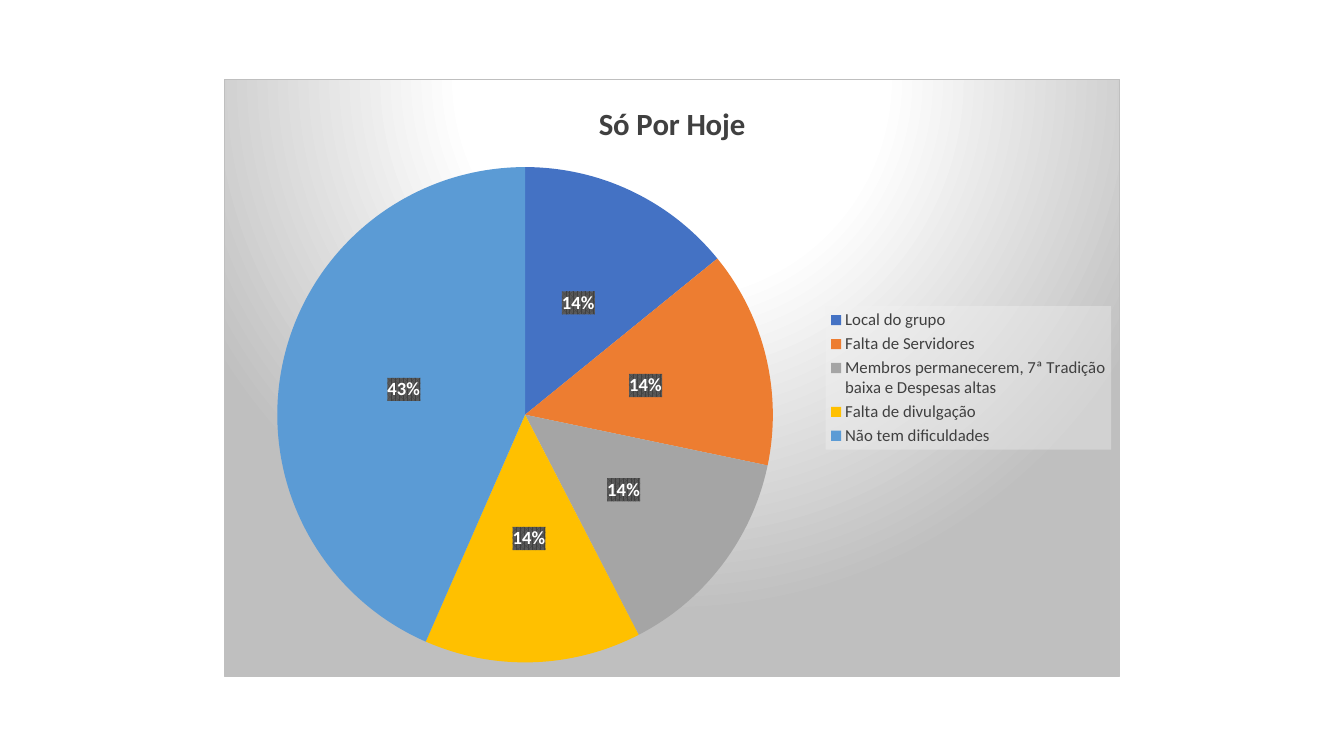
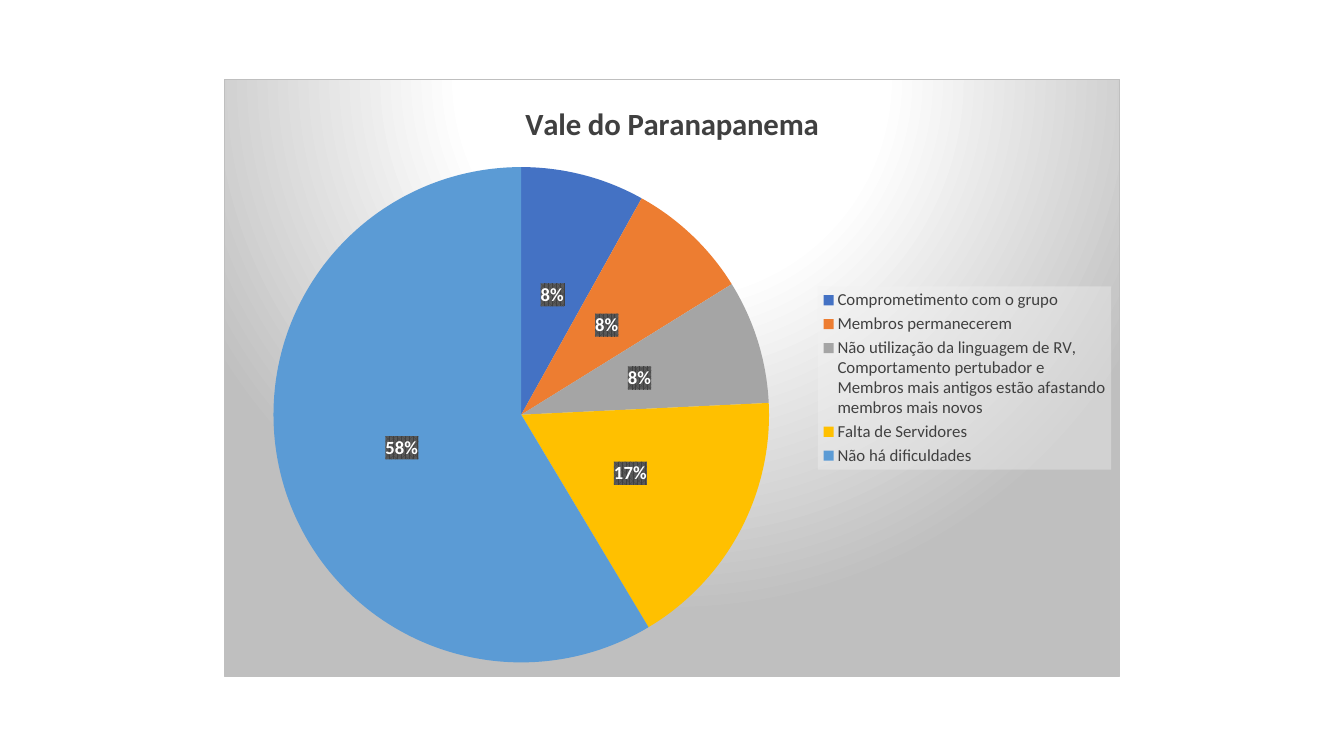
"""Build two slides, each with a pie chart of the difficulties one group reported."""
from dataclasses import dataclass

from pptx import Presentation
from pptx.chart.chart import Chart
from pptx.chart.data import CategoryChartData
from pptx.dml.color import RGBColor
from pptx.enum.chart import XL_CHART_TYPE, XL_LABEL_POSITION, XL_LEGEND_POSITION
from pptx.oxml import parse_xml
from pptx.oxml.ns import nsdecls
from pptx.presentation import Presentation as Deck
from pptx.text.text import Font
from pptx.util import Cm, Pt

PIE = XL_CHART_TYPE.PIE
LEGEND_RIGHT = XL_LEGEND_POSITION.RIGHT
LABEL_CENTER = XL_LABEL_POSITION.CENTER

FONT_NAME = "Calibri"
BLACK = RGBColor(0x00, 0x00, 0x00)
WHITE = RGBColor(0xFF, 0xFF, 0xFF)
DARK_GRAY = RGBColor(0x40, 0x40, 0x40)
LABEL_GRAY = RGBColor(0x59, 0x59, 0x59)
BORDER_GRAY = RGBColor(0xBF, 0xBF, 0xBF)
LEGEND_GRAY = RGBColor(0xF2, 0xF2, 0xF2)
SLICE_COLORS = (
    RGBColor(0x44, 0x72, 0xC4),
    RGBColor(0xED, 0x7D, 0x31),
    RGBColor(0xA5, 0xA5, 0xA5),
    RGBColor(0xFF, 0xC0, 0x00),
    RGBColor(0x5B, 0x9B, 0xD5),
)

SLIDE_WIDTH, SLIDE_HEIGHT = Cm(33.87), Cm(19.05)
CHART_WIDTH, CHART_HEIGHT = Cm(22.58), Cm(15.06)
BLANK_LAYOUT = 6

BACKGROUND = f"""
<a:gradFill><a:gsLst>
<a:gs pos="0"><a:srgbClr val="{WHITE}"/></a:gs>
<a:gs pos="39000"><a:srgbClr val="{WHITE}"/></a:gs>
<a:gs pos="100000"><a:srgbClr val="{BORDER_GRAY}"/></a:gs>
</a:gsLst><a:path path="circle">
<a:fillToRect l="50000" t="-80000" r="50000" b="180000"/></a:path></a:gradFill>
<a:ln w="{Pt(0.75)}"><a:solidFill><a:srgbClr val="{BORDER_GRAY}"/></a:solidFill></a:ln>"""
LEGEND_PANEL = f"""
<a:solidFill><a:srgbClr val="{LEGEND_GRAY}"><a:alpha val="39000"/></a:srgbClr></a:solidFill>
<a:ln><a:noFill/></a:ln>"""
LABEL_PANEL = f"""
<a:pattFill prst="pct75"><a:fgClr><a:srgbClr val="{DARK_GRAY}"/></a:fgClr>
<a:bgClr><a:srgbClr val="{LABEL_GRAY}"/></a:bgClr></a:pattFill>
<a:ln><a:noFill/></a:ln>"""
PANELS = {
    "c:txPr": BACKGROUND,
    "c:chart/c:legend/c:txPr": LEGEND_PANEL,
    ".//c:ser/c:dLbls/c:txPr": LABEL_PANEL,
}


@dataclass(frozen=True)
class GroupSurvey:
    """Difficulties of one group and their shares in percent."""

    group: str
    shares: dict[str, int]


SURVEYS = (
    GroupSurvey("Só Por Hoje", {
        "Local do grupo": 14,
        "Falta de Servidores": 14,
        "Membros permanecerem, 7ª Tradição baixa e Despesas altas": 14,
        "Falta de divulgação": 14,
        "Não tem dificuldades": 43,
    }),
    GroupSurvey("Vale do Paranapanema", {
        "Comprometimento com o grupo": 8,
        "Membros permanecerem": 8,
        "Não utilização da linguagem de RV, Comportamento pertubador e "
        "Membros mais antigos estão afastando membros mais novos": 8,
        "Falta de Servidores": 17,
        "Não há dificuldades": 58,
    }),
)


def set_font(font: Font, size: float, color: RGBColor, bold: bool = False) -> None:
    """Give a font the shared typeface and its own size, colour and weight."""
    font.name = FONT_NAME
    font.size = Pt(size)
    font.bold = bold
    font.color.rgb = color


def add_panels(chart: Chart) -> None:
    """Fill the areas behind the chart, the legend and the labels."""
    for text_path, fill in PANELS.items():
        for text_properties in chart.element.xpath(text_path):
            panel = parse_xml(f"<c:spPr {nsdecls('c', 'a')}>{fill}</c:spPr>")
            text_properties.addprevious(panel)


def add_survey_slide(deck: Deck, survey: GroupSurvey) -> None:
    """Add a slide with the pie chart of one survey in its centre."""
    slide = deck.slides.add_slide(deck.slide_layouts[BLANK_LAYOUT])
    data = CategoryChartData()
    data.categories = list(survey.shares)
    data.add_series(survey.group, list(survey.shares.values()))
    left = (SLIDE_WIDTH - CHART_WIDTH) // 2
    top = (SLIDE_HEIGHT - CHART_HEIGHT) // 2
    chart = slide.shapes.add_chart(PIE, left, top, CHART_WIDTH, CHART_HEIGHT, data).chart
    set_font(chart.font, 10, BLACK)

    chart.has_title = True
    heading = chart.chart_title.text_frame
    heading.text = survey.group
    set_font(heading.paragraphs[0].font, 22, DARK_GRAY, bold=True)

    chart.has_legend = True
    chart.legend.position = LEGEND_RIGHT
    chart.legend.include_in_layout = False
    set_font(chart.legend.font, 12, DARK_GRAY)

    pie = chart.plots[0]
    pie.vary_by_categories = True
    slices = pie.series[0]
    for index, color in enumerate(SLICE_COLORS):
        fill = slices.points[index].format.fill
        fill.solid()
        fill.fore_color.rgb = color

    labels = slices.data_labels
    labels.show_value = True
    labels.number_format = '0"%"'
    labels.number_format_is_linked = False
    labels.position = LABEL_CENTER
    set_font(labels.font, 13.3, WHITE, bold=True)
    add_panels(chart)


def main() -> None:
    """Create the deck and save it."""
    deck = Presentation()
    deck.slide_width, deck.slide_height = SLIDE_WIDTH, SLIDE_HEIGHT
    for survey in SURVEYS:
        add_survey_slide(deck, survey)
    deck.save("out.pptx")


if __name__ == "__main__":
    main()
